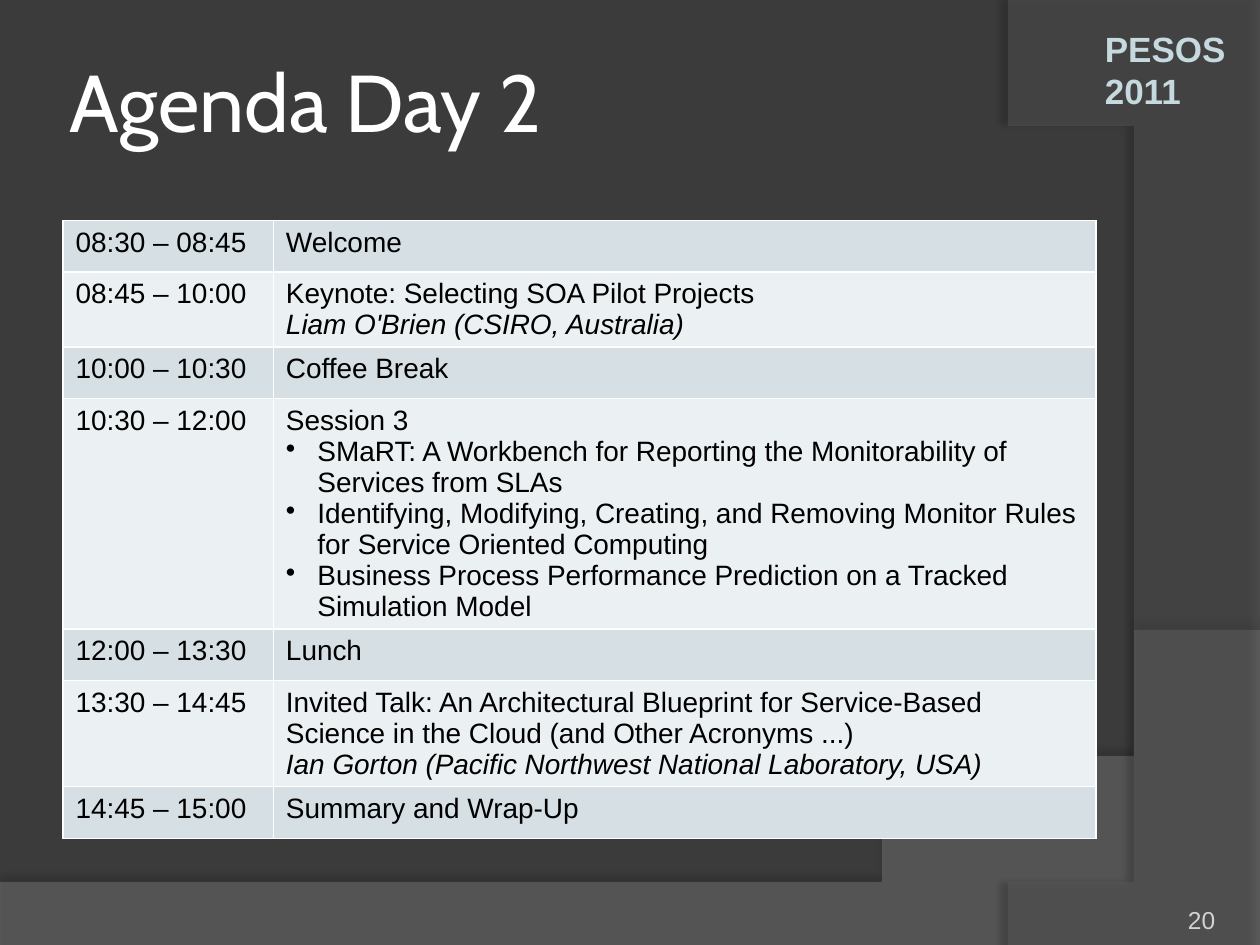
import dataclasses

import pptx
import pptx.dml.color
import pptx.enum.text
import pptx.oxml
import pptx.oxml.ns
import pptx.util
from pptx.util import Inches


@dataclasses.dataclass(frozen=True)
class Theme:
    background: str = "3B3B3B"
    wave: str = "7F7F7F"
    arc: str = "5E5E5E"
    shadow: str = "000000"
    title: str = "FFFFFF"
    event: str = "C5D9DF"
    number: str = "D4D2D0"
    ink: str = "000000"
    border: str = "FFFFFF"
    bands: tuple = ("D5DFE4", "EBF0F2")
    title_font: str = "Cabin"
    body_font: str = "Arial"
    title_size: int = 46
    event_size: int = 20
    body_size: int = 16
    number_size: int = 14


THEME = Theme()
AGENDA = [
    ("08:30 – 08:45", ["Welcome"], {}),
    ("08:45 – 10:00", ["Keynote: Selecting SOA Pilot Projects"],
     {"speaker": "Liam O'Brien (CSIRO, Australia)"}),
    ("10:00 – 10:30", ["Coffee Break"], {}),
    ("10:30 – 12:00", ["Session 3"], {"papers": [
        "SMaRT: A Workbench for Reporting the Monitorability of Services from SLAs",
        "Identifying, Modifying, Creating, and Removing Monitor Rules for Service Oriented Computing",
        "Business Process Performance Prediction on a Tracked Simulation Model",
    ]}),
    ("12:00 – 13:30", ["Lunch"], {}),
    ("13:30 – 14:45",
     ["Invited Talk: An Architectural Blueprint for Service-Based Science in the Cloud (and Other Acronyms ...)"],
     {"speaker": "Ian Gorton (Pacific Northwest National Laboratory, USA)"}),
    ("14:45 – 15:00", ["Summary and Wrap-Up"], {}),
]


def rgb(color):
    return pptx.dml.color.RGBColor.from_string(color)


def xml(markup):
    return pptx.oxml.parse_xml(markup.replace(" ", f" {pptx.oxml.ns.nsdecls('a')} ", 1))


def write(paragraph, text, size=THEME.body_size, color=THEME.ink,
          font=THEME.body_font, bold=False, italic=False, bullet=False):
    if bullet:
        properties = paragraph._p.get_or_add_pPr()
        properties.set("marL", str(Inches(0.25)))
        properties.set("indent", str(Inches(-0.25)))
        properties.append(xml('<a:buChar char="•"/>'))
    span = paragraph.add_run()
    span.text = text
    span.font.name = font
    span.font.size = pptx.util.Pt(size)
    span.font.color.rgb = rgb(color)
    span.font.bold = bold
    span.font.italic = italic


def add_label(page, text, left, top, width, height, **style):
    box = page.shapes.add_textbox(Inches(left), Inches(top), Inches(width), Inches(height))
    box.text_frame.word_wrap = True
    write(box.text_frame.paragraphs[0], text, **style)


def curve(start, first, second, end, steps=60):
    points = []
    for step in range(steps + 1):
        t = step / steps
        weights = ((1 - t) ** 3, 3 * t * (1 - t) ** 2, 3 * t * t * (1 - t), t ** 3)
        points.append(tuple(
            sum(weight * value for weight, value in zip(weights, values))
            for values in zip(start, first, second, end)))
    return points


def add_sweep(page, points, color, opacity, shadow_opacity, distance, direction):
    builder = page.shapes.build_freeform(*points[0], scale=Inches(1))
    builder.add_line_segments(points[1:], close=True)
    sweep = builder.convert_to_shape()
    sweep.fill.solid()
    sweep.fill.fore_color.rgb = rgb(color)
    tint = sweep._element.spPr.find(".//" + pptx.oxml.ns.qn("a:srgbClr"))
    tint.append(xml(f'<a:alpha val="{opacity * 1000}"/>'))
    sweep.line.fill.background()
    sweep._element.spPr.append(xml(
        f'<a:effectLst ><a:outerShdw blurRad="{pptx.util.Pt(4)}" '
        f'dist="{pptx.util.Pt(distance)}" dir="{direction * 60000}" algn="ctr" rotWithShape="0">'
        f'<a:srgbClr val="{THEME.shadow}"><a:alpha val="{shadow_opacity * 1000}"/></a:srgbClr>'
        '</a:outerShdw></a:effectLst>'))


def add_background(page):
    page.background.fill.solid()
    page.background.fill.fore_color.rgb = rgb(THEME.background)
    wave = curve((10, 5.2), (5.59, 7.29), (3.91, 7.19), (0, 7.05))
    add_sweep(page, wave + [(0, 7.51), (10, 7.51)], THEME.wave, 45, 35, 3.5, 270)
    arc = curve((8.21, 7.5), (9.35, 6.19), (10.18, 3), (8, 0))
    add_sweep(page, arc + [(10, 0.02), (10, 7.5)], THEME.arc, 40, 45, 4, 180)


def add_title(page, text):
    title = page.shapes.title
    title.left, title.top = Inches(0.5), Inches(0.17)
    title.width, title.height = Inches(8.17), Inches(1.25)
    frame = title.text_frame
    frame.margin_left = frame.margin_right = Inches(0.05)
    frame.margin_top = frame.margin_bottom = Inches(0.05)
    frame.vertical_anchor = pptx.enum.text.MSO_ANCHOR.MIDDLE
    frame.paragraphs[0].alignment = pptx.enum.text.PP_ALIGN.LEFT
    write(frame.paragraphs[0], text, size=THEME.title_size,
          color=THEME.title, font=THEME.title_font)
    page.shapes._spTree.append(title._element)


def format_cell(cell, color):
    properties = cell._tc.get_or_add_tcPr()
    for side in ("lnL", "lnR", "lnT", "lnB"):
        properties.append(xml(
            f'<a:{side} w="{pptx.util.Pt(1)}"><a:solidFill>'
            f'<a:srgbClr val="{THEME.border}"/></a:solidFill></a:{side}>'))
    cell.fill.solid()
    cell.fill.fore_color.rgb = rgb(color)


def fill_cell(cell, lines, speaker=None, papers=()):
    entries = [(line, {}) for line in lines]
    entries += [(paper, {"bullet": True}) for paper in papers]
    if speaker:
        entries.append((speaker, {"italic": True}))
    frame = cell.text_frame
    for index, (text, style) in enumerate(entries):
        paragraph = frame.add_paragraph() if index else frame.paragraphs[0]
        write(paragraph, text, **style)


def add_agenda(page, agenda):
    row_height = Inches(0.41)
    table = page.shapes.add_table(len(agenda), 2, Inches(0.5), Inches(1.75),
                                  Inches(8.2), row_height * len(agenda)).table
    table.first_row = table.horz_banding = False
    for column, width in zip(table.columns, (1.67, 6.53)):
        column.width = Inches(width)
    for index, (time, lines, details) in enumerate(agenda):
        table.rows[index].height = row_height
        time_cell, topic_cell = table.rows[index].cells
        for cell in (time_cell, topic_cell):
            format_cell(cell, THEME.bands[index % 2])
        fill_cell(time_cell, [time])
        fill_cell(topic_cell, lines, **details)


def main():
    deck = pptx.Presentation()
    deck.slide_width, deck.slide_height = Inches(10), Inches(7.5)
    page = deck.slides.add_slide(deck.slide_layouts.get_by_name("Title Only"))
    add_background(page)
    add_label(page, "PESOS 2011", 8.67, 0.17, 1.17, 0.77,
              size=THEME.event_size, color=THEME.event, bold=True)
    add_label(page, "20", 9.33, 7.13, 0.5, 0.34,
              size=THEME.number_size, color=THEME.number)
    add_title(page, "Agenda Day 2")
    add_agenda(page, AGENDA)
    deck.save("out.pptx")


if __name__ == "__main__":
    main()
